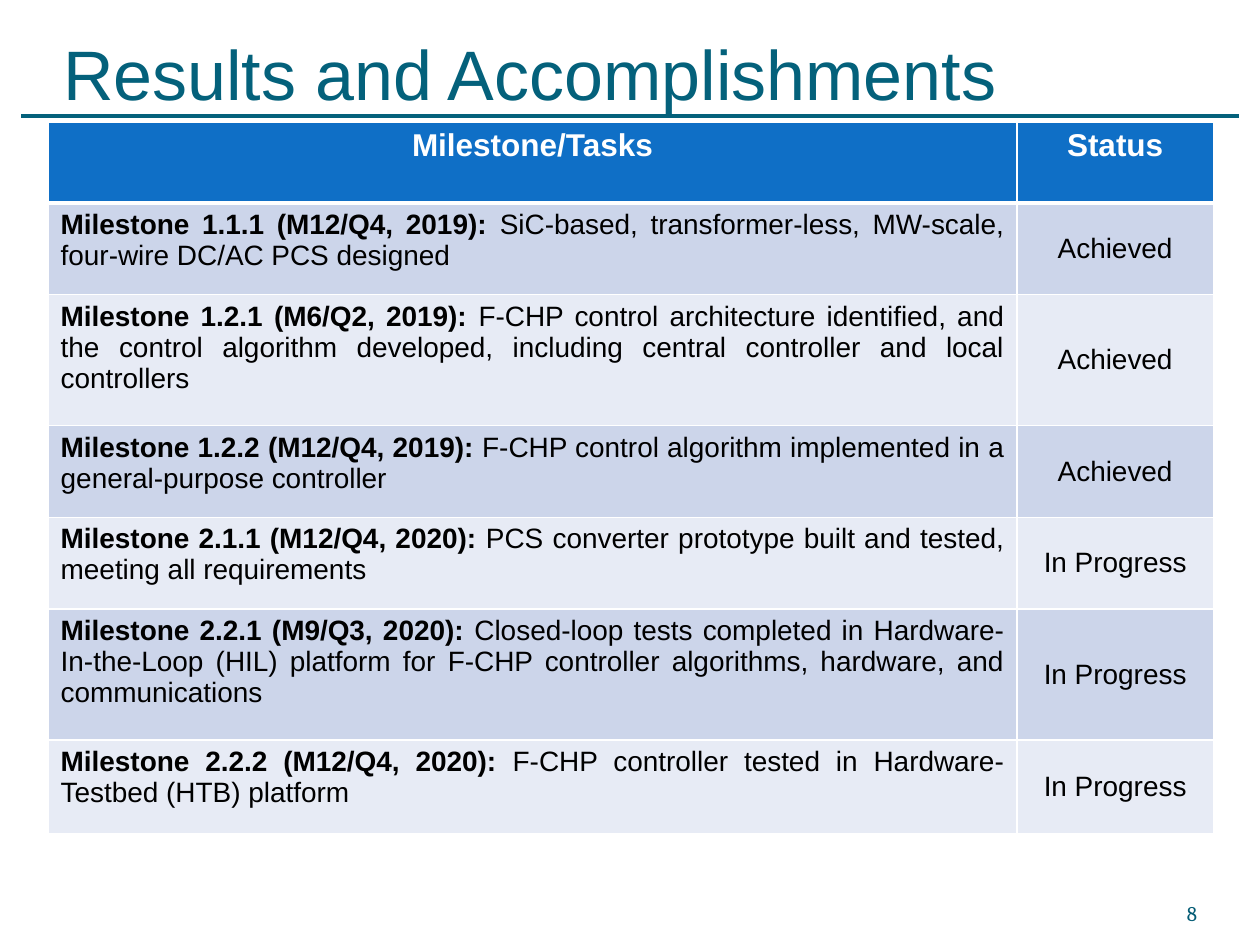
from lxml.etree import SubElement
from pptx import Presentation
from pptx.dml.color import RGBColor
from pptx.enum.shapes import MSO_CONNECTOR
from pptx.enum.text import MSO_ANCHOR, MSO_AUTO_SIZE, PP_ALIGN
from pptx.oxml.ns import qn
from pptx.util import Cm, Pt

TEAL, BLUE, WHITE, BLACK = "04617B", "0F6FC6", "FFFFFF", "000000"
BANDS = ("CCD5EA", "E7EBF5")
COLUMNS = (19.53, 3.96)
HEADERS = ("Milestone/Tasks", "Status")
HEADER_HEIGHT = 1.63
MILESTONES = [
    (1.85, "Milestone 1.1.1 (M12/Q4, 2019):",
     "SiC-based, transformer-less, MW-scale, four-wire DC/AC PCS designed", "Achieved"),
    (2.64, "Milestone 1.2.1 (M6/Q2, 2019):",
     "F-CHP control architecture identified, and the control algorithm developed, "
     "including central controller and local controllers", "Achieved"),
    (1.85, "Milestone 1.2.2 (M12/Q4, 2019):",
     "F-CHP control algorithm implemented in a general-purpose controller", "Achieved"),
    (1.85, "Milestone 2.1.1 (M12/Q4, 2020):",
     "PCS converter prototype built and tested, meeting all requirements", "In Progress"),
    (2.64, "Milestone 2.2.1 (M9/Q3, 2020):",
     "Closed-loop tests completed in Hardware-In-the-Loop (HIL) platform for F-CHP "
     "controller algorithms, hardware, and communications", "In Progress"),
    (1.88, "Milestone 2.2.2 (M12/Q4, 2020):",
     "F-CHP controller tested in Hardware-Testbed (HTB) platform", "In Progress"),
]


def rgb(color):
    return RGBColor.from_string(color)


def add_run(p, text, size, color, bold=False, font="Arial"):
    r = p.add_run()
    r.text = text
    r.font.name, r.font.size, r.font.bold = font, Pt(size), bold
    r.font.color.rgb = rgb(color)


def prepare_frame(tf, top_inset=0):
    tf.word_wrap = True
    tf.auto_size = MSO_AUTO_SIZE.NONE
    tf.vertical_anchor = MSO_ANCHOR.BOTTOM
    tf.margin_left = tf.margin_right = tf.margin_bottom = 0
    tf.margin_top = Cm(top_inset)
    return tf.paragraphs[0]


def add_title(s, left, top, width, height):
    sp = s.shapes.title
    sp.left, sp.top, sp.width, sp.height = Cm(left), Cm(top), Cm(width), Cm(height)
    p = prepare_frame(sp.text_frame, 0.13)
    p.alignment = PP_ALIGN.LEFT
    add_run(p, "Results and Accomplishments", 40, TEAL)


def add_rule(s, left, top, width):
    line = s.shapes.add_connector(
        MSO_CONNECTOR.STRAIGHT, Cm(left), Cm(top), Cm(left + width), Cm(top))
    line.line.color.rgb = rgb(TEAL)
    line.line.width = Pt(2.25)
    SubElement(line._element.spPr, qn("a:effectLst"))


def add_page_number(s, left, top, width, height):
    sp = s.shapes.add_textbox(Cm(left), Cm(top), Cm(width), Cm(height))
    p = prepare_frame(sp.text_frame)
    p.alignment = PP_ALIGN.RIGHT
    add_run(p, "8", 12, "045C75", font="Cambria")


def style_cell(cell, fill, bottom=1):
    tcPr = cell._tc.get_or_add_tcPr()
    for side, width in (("L", 1), ("R", 1), ("T", 1), ("B", bottom)):
        ln = SubElement(tcPr, qn(f"a:ln{side}"), w=str(Pt(width)))
        SubElement(SubElement(ln, qn("a:solidFill")), qn("a:srgbClr"), val=WHITE)
    cell.fill.solid()
    cell.fill.fore_color.rgb = rgb(fill)


def add_milestone_table(s, left, top):
    heights = [HEADER_HEIGHT] + [m[0] for m in MILESTONES]
    table = s.shapes.add_table(
        len(heights), len(COLUMNS), Cm(left), Cm(top),
        Cm(sum(COLUMNS)), Cm(sum(heights))).table
    for column, width in zip(table.columns, COLUMNS):
        column.width = Cm(width)
    for row, height in zip(table.rows, heights):
        row.height = Cm(height)

    for cell, text in zip(table.rows[0].cells, HEADERS):
        style_cell(cell, BLUE, bottom=3)
        p = cell.text_frame.paragraphs[0]
        p.alignment = PP_ALIGN.CENTER
        add_run(p, text, 18, WHITE, bold=True)

    for i, (_, name, task, status) in enumerate(MILESTONES):
        task_cell, status_cell = table.rows[i + 1].cells
        for cell in (task_cell, status_cell):
            style_cell(cell, BANDS[i % 2])
        p = task_cell.text_frame.paragraphs[0]
        p.alignment = PP_ALIGN.JUSTIFY
        add_run(p, name + " ", 16, BLACK, bold=True)
        add_run(p, task, 16, BLACK)
        status_cell.vertical_anchor = MSO_ANCHOR.MIDDLE
        p = status_cell.text_frame.paragraphs[0]
        p.alignment = PP_ALIGN.CENTER
        add_run(p, status, 16, BLACK)


def main():
    prs = Presentation()
    prs.slide_width, prs.slide_height = Cm(25.4), Cm(19.05)
    s = prs.slides.add_slide(prs.slide_layouts[5])
    add_rule(s, 0.43, 2.34, 24.54)
    add_title(s, 1.27, 1.47, 22.86, 0.84)
    add_page_number(s, 22.02, 17.65, 2.11, 1.02)
    add_milestone_table(s, 0.97, 2.46)
    prs.save("out.pptx")


if __name__ == "__main__":
    main()
